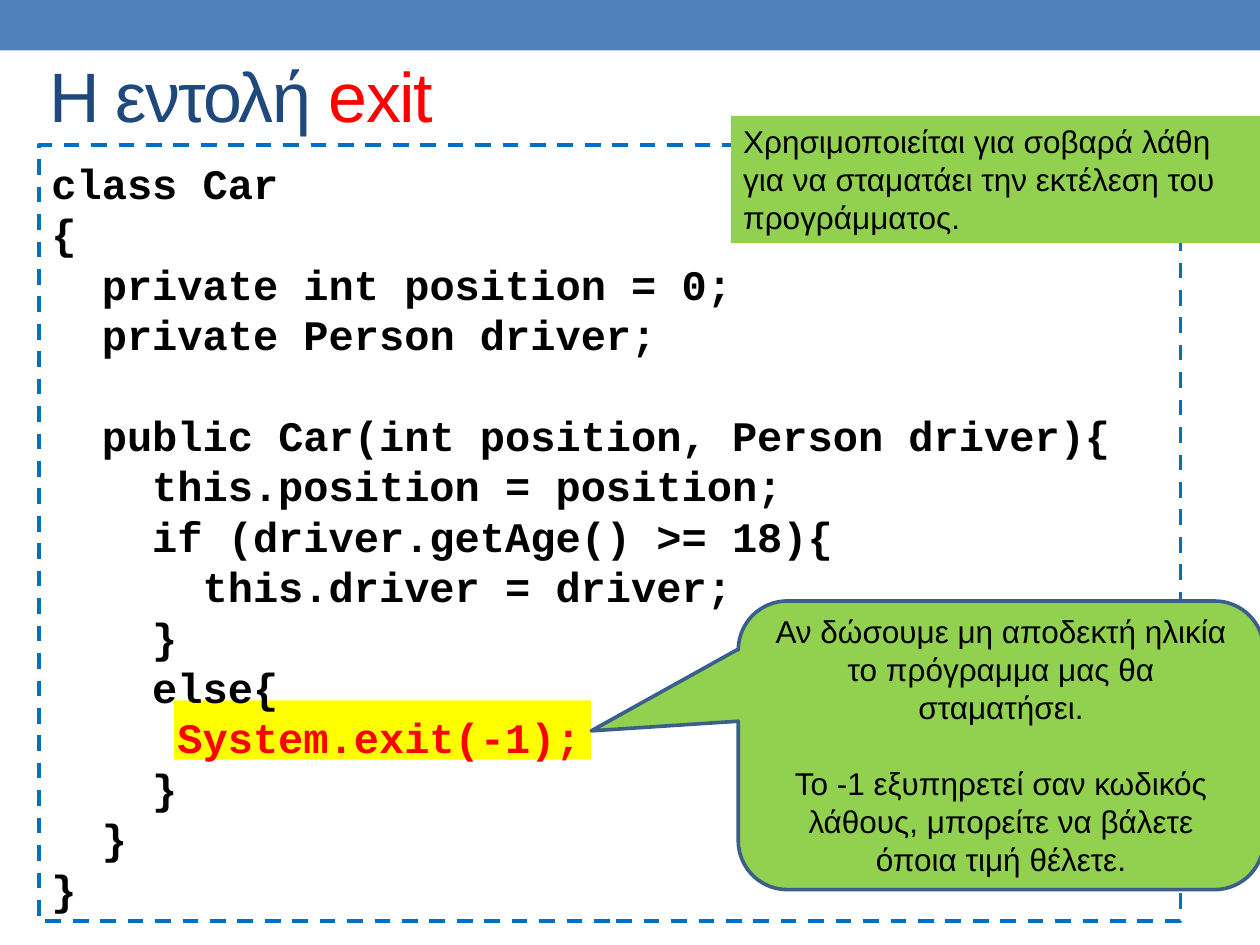
from dataclasses import dataclass
from typing import Optional

from pptx import Presentation
from pptx.dml.color import RGBColor
from pptx.enum.dml import MSO_LINE
from pptx.enum.shapes import MSO_SHAPE
from pptx.enum.text import MSO_ANCHOR, PP_ALIGN
from pptx.util import Inches, Pt

BLUE = RGBColor(0x4F, 0x81, 0xBD)
NAVY = RGBColor(0x1F, 0x49, 0x7D)
DASH_BLUE = RGBColor(0x00, 0x70, 0xC0)
OUTLINE_BLUE = RGBColor(0x3A, 0x5F, 0x8C)
GREEN = RGBColor(0x92, 0xD0, 0x50)
YELLOW = RGBColor(0xFF, 0xFF, 0x00)
RED = RGBColor(0xFF, 0x00, 0x00)
BLACK = RGBColor(0x00, 0x00, 0x00)

# The slide is a grid of 10 columns by 7.5 rows
COLUMNS, ROWS = 10, 7.5
CELL = Inches(1)
CODE_COLUMN = Inches(0.2)  # width of one code character


@dataclass
class Panel:
    column: float
    row: float
    columns: float
    rows: float
    fill: Optional[RGBColor] = None
    line: Optional[RGBColor] = None
    line_width: float = 0
    dash: Optional[MSO_LINE] = None
    kind: MSO_SHAPE = MSO_SHAPE.RECTANGLE
    anchor: MSO_ANCHOR = MSO_ANCHOR.TOP


@dataclass
class CodeLine:
    indent: int  # in characters
    text: str
    color: RGBColor = BLACK
    lines_before: int = 0


BAR = Panel(0, 0, COLUMNS, 0.4, BLUE)
HIGHLIGHT = Panel(1.38, 5.56, 3.31, 0.47, YELLOW)
CODE = Panel(0.31, 1.15, 9.06, 6.16, line=DASH_BLUE, line_width=2.25, dash=MSO_LINE.DASH)
USAGE = Panel(5.8, 0.92, 4.2, 1.01, GREEN)
CALLOUT = Panel(5.86, 4.77, 4.17, 2.29, GREEN, OUTLINE_BLUE, 2.08,
                kind=MSO_SHAPE.ROUNDED_RECTANGULAR_CALLOUT, anchor=MSO_ANCHOR.MIDDLE)

CODE_LINES = (
    CodeLine(0, "class Car"),
    CodeLine(0, "{"),
    CodeLine(2, "private int position = 0;"),
    CodeLine(2, "private Person driver;"),
    CodeLine(2, "public Car(int position, Person driver){", lines_before=1),
    CodeLine(4, "this.position = position;"),
    CodeLine(4, "if (driver.getAge() >= 18){"),
    CodeLine(6, "this.driver = driver;"),
    CodeLine(4, "}"),
    CodeLine(4, "else{"),
    CodeLine(5, "System.exit(-1);", RED),
    CodeLine(4, "}"),
    CodeLine(2, "}"),
    CodeLine(0, "}"),
)
USAGE_TEXT = "Χρησιμοποιείται για σοβαρά λάθη για να σταματάει την εκτέλεση του προγράμματος."
CALLOUT_TEXTS = (
    "Αν δώσουμε μη αποδεκτή ηλικία το πρόγραμμα μας θα σταματήσει.",
    "Το -1 εξυπηρετεί σαν κωδικός λάθους, μπορείτε να βάλετε όποια τιμή θέλετε.",
)


def write(paragraph, text: str, *, size: float = 18, font: str = "Arial",
          color: RGBColor = BLACK, bold: bool = False, align=PP_ALIGN.LEFT,
          pitch: Optional[float] = None, lines_before: int = 0,
          indent: int = 0, tracking: float = 0) -> None:
    """Append a formatted run; pitch is the line height in points."""
    paragraph.alignment = align
    if pitch:
        paragraph.line_spacing = Pt(pitch)
        paragraph.space_before = Pt(pitch * lines_before)
    if indent:
        paragraph._p.get_or_add_pPr().set("marL", str(indent))
    run = paragraph.add_run()
    run.text = text
    run.font.name = font
    run.font.size = Pt(size)
    run.font.bold = bold
    run.font.color.rgb = color
    if tracking:
        run.font._element.set("spc", str(round(tracking * 100)))


def place(shape, panel: Panel) -> None:
    shape.left, shape.top = round(panel.column * CELL), round(panel.row * CELL)
    shape.width, shape.height = round(panel.columns * CELL), round(panel.rows * CELL)


def draw_panel(slide, panel: Panel):
    shape = slide.shapes.add_shape(panel.kind, 0, 0, CELL, CELL)
    place(shape, panel)
    shape.shadow.inherit = False
    if panel.fill is None:
        shape.fill.background()
    else:
        shape.fill.solid()
        shape.fill.fore_color.rgb = panel.fill
    if panel.line is None:
        shape.line.fill.background()
    else:
        shape.line.color.rgb = panel.line
        shape.line.width = Pt(panel.line_width)
        if panel.dash:
            shape.line.dash_style = panel.dash
    shape.text_frame.word_wrap = True
    shape.text_frame.vertical_anchor = panel.anchor
    return shape


def next_paragraph(frame, index: int):
    return frame.add_paragraph() if index else frame.paragraphs[0]


def main() -> None:
    deck = Presentation()
    deck.slide_width, deck.slide_height = COLUMNS * CELL, round(ROWS * CELL)
    slide = deck.slides.add_slide(deck.slide_layouts[5])

    # Top bar and title
    draw_panel(slide, BAR)
    title = slide.shapes.title
    place(title, Panel(0.29, 0.21, 9, 1.08))
    title.text_frame.vertical_anchor = MSO_ANCHOR.MIDDLE
    for words, color in (("Η εντολή ", NAVY), ("exit", RED)):
        write(title.text_frame.paragraphs[0], words, size=40, color=color, tracking=-1)

    # Code listing over its highlighted line
    draw_panel(slide, HIGHLIGHT)
    listing = draw_panel(slide, CODE).text_frame
    listing.margin_top = Inches(0.1)
    for index, line in enumerate(CODE_LINES):
        write(next_paragraph(listing, index), line.text, size=24, font="Courier New",
              color=line.color, bold=True, pitch=28.8,
              lines_before=line.lines_before, indent=line.indent * CODE_COLUMN)

    # Usage note
    usage = draw_panel(slide, USAGE).text_frame
    write(usage.paragraphs[0], USAGE_TEXT, pitch=21.7)

    # Callout pointing at the exit call
    callout = draw_panel(slide, CALLOUT)
    for index, value in enumerate((-0.78, -0.05, 0.17)):
        callout.adjustments[index] = value
    for index, text in enumerate(CALLOUT_TEXTS):
        write(next_paragraph(callout.text_frame, index), text, align=PP_ALIGN.CENTER,
              pitch=21.7, lines_before=index)

    deck.save("out.pptx")


if __name__ == "__main__":
    main()
